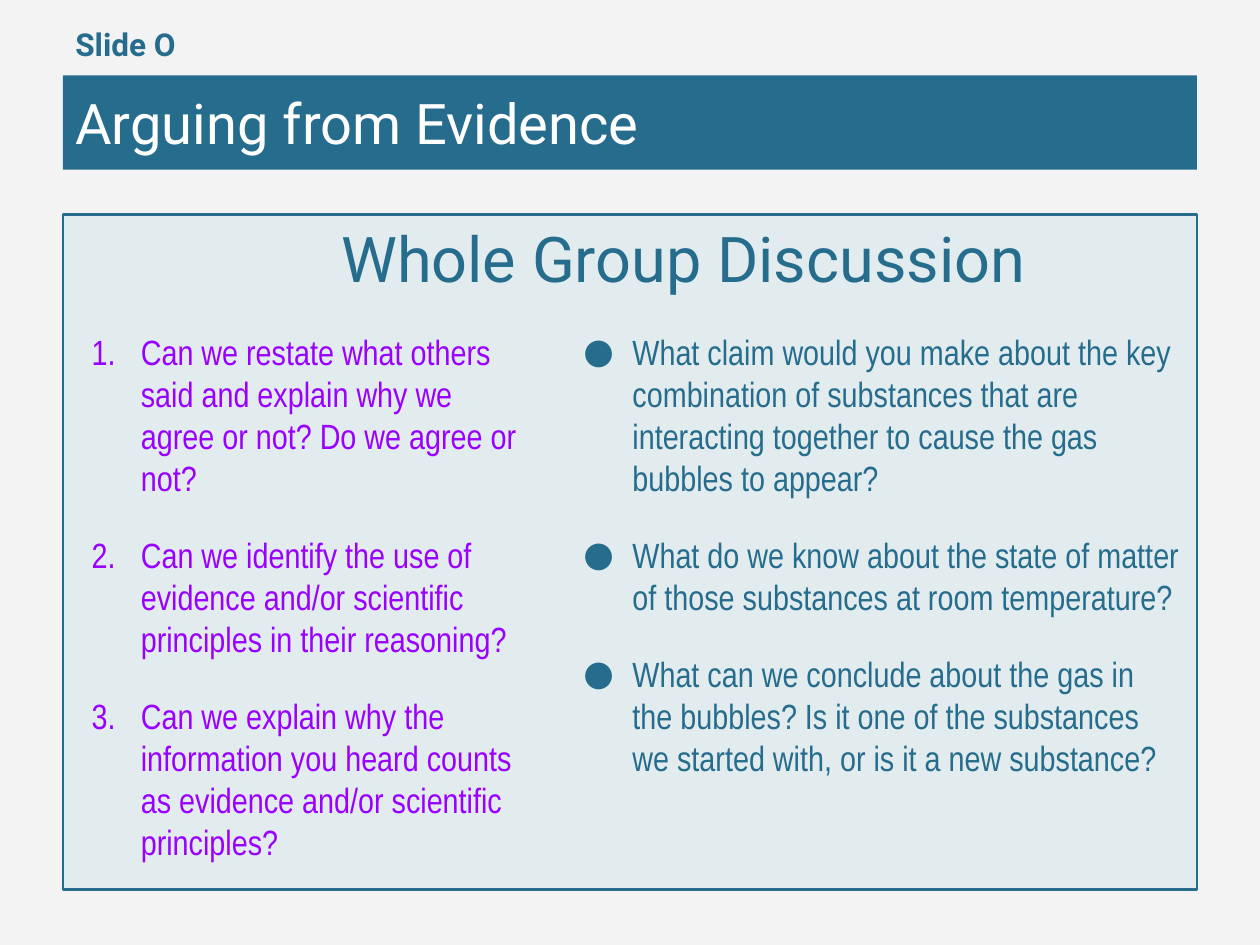
from lxml.etree import SubElement
from pptx import Presentation
from pptx.dml.color import RGBColor
from pptx.enum.shapes import MSO_SHAPE
from pptx.enum.text import MSO_ANCHOR
from pptx.oxml.ns import qn
from pptx.util import Cm, Pt

# Content
LABEL = "Slide O"
TITLE = "Arguing from Evidence"
HEADING = "Whole Group Discussion"
PROMPTS = [
    "Can we restate what others said and explain why we agree or not? Do we agree or not?",
    "Can we identify the use of evidence and/or scientific principles in their reasoning?",
    "Can we explain why the information you heard counts as evidence and/or scientific principles?",
]
QUESTIONS = [
    "What claim would you make about the key combination of substances that are "
    "interacting together to cause the gas bubbles to appear?",
    "What do we know about the state of matter of those substances at room temperature?",
    "What can we conclude about the gas in the bubbles? Is it one of the substances "
    "we started with, or is it a new substance?",
]

# Style
TEAL = RGBColor(0x25, 0x6C, 0x8D)
PURPLE = RGBColor(0x99, 0x00, 0xFF)
PALE = RGBColor(0xE2, 0xEB, 0xED)
GREY = RGBColor(0xF3, 0xF3, 0xF3)
WHITE = RGBColor(0xFF, 0xFF, 0xFF)
NUMBERS = ("Arial Narrow", "a:buAutoNum", {"type": "arabicPeriod"})
DOTS = ("Roboto", "a:buChar", {"char": "●"})
MARGIN, CONTENT_WIDTH = 1.27, 22.86
LIST_TOP, LIST_HEIGHT = 5.46, 12

deck = Presentation()
deck.slide_width, deck.slide_height = Cm(25.4), Cm(19.05)
page = deck.slides.add_slide(deck.slide_layouts[6])
page.background.fill.solid()
page.background.fill.fore_color.rgb = GREY


def add_panel(top, height, fill, line=None):
    panel = page.shapes.add_shape(
        MSO_SHAPE.RECTANGLE, Cm(MARGIN), Cm(top), Cm(CONTENT_WIDTH), Cm(height))
    panel.shadow.inherit = False
    panel.fill.solid()
    panel.fill.fore_color.rgb = fill
    if line is None:
        panel.line.fill.background()
    else:
        panel.line.color.rgb = line
        panel.line.width = Pt(1.5)


def add_bullet(para, bullet, color):
    font, tag, attributes = bullet
    properties = para._p.get_or_add_pPr()
    properties.set("marL", str(Cm(1.27)))
    properties.set("indent", str(Cm(-0.99)))
    bullet_color = SubElement(properties, qn("a:buClr"))
    SubElement(bullet_color, qn("a:srgbClr"), val=str(color))
    SubElement(properties, qn("a:buFont"), typeface=font)
    SubElement(properties, qn(tag), attributes)


def add_text(lines, left, top, width, height, size, color=TEAL, font="Roboto",
             bold=False, anchor=MSO_ANCHOR.TOP, inset=0.25, inset_top=0.25, bullet=None):
    box = page.shapes.add_textbox(Cm(left), Cm(top), Cm(width), Cm(height))
    frame = box.text_frame
    frame.word_wrap = True
    frame.vertical_anchor = anchor
    frame.margin_left = frame.margin_right = frame.margin_bottom = Cm(inset)
    frame.margin_top = Cm(inset_top)
    for index, line in enumerate(lines):
        para = frame.paragraphs[0] if index == 0 else frame.add_paragraph()
        if index:
            para.space_before = Pt(20)  # gap between items
        if bullet:
            add_bullet(para, bullet, color)
        span = para.add_run()
        span.text = line
        span.font.size, span.font.name, span.font.bold = Pt(size), font, bold
        span.font.color.rgb = color


# Panel and title bar
add_panel(4.32, 13.61, PALE, TEAL)
add_panel(1.52, 1.9, TEAL)
add_text([TITLE], MARGIN, 1.52, CONTENT_WIDTH, 1.9, 32, WHITE, anchor=MSO_ANCHOR.MIDDLE)
add_text([LABEL], MARGIN, 0, 10.34, 1.52, 18, bold=True, anchor=MSO_ANCHOR.BOTTOM)

# Discussion heading and the two lists, which start level and end inside the panel
add_text([HEADING], 6.63, 4.17, 14.86, 2.49, 36)
for lines, left, width, color, bullet in [
    (QUESTIONS, 11.48, 12.32, TEAL, DOTS),
    (PROMPTS, 1.57, 9.17, PURPLE, NUMBERS),
]:
    add_text(lines, left, LIST_TOP, width, LIST_HEIGHT, 20, color, "Arial Narrow",
             inset=0, inset_top=1.2, bullet=bullet)

deck.save("out.pptx")
